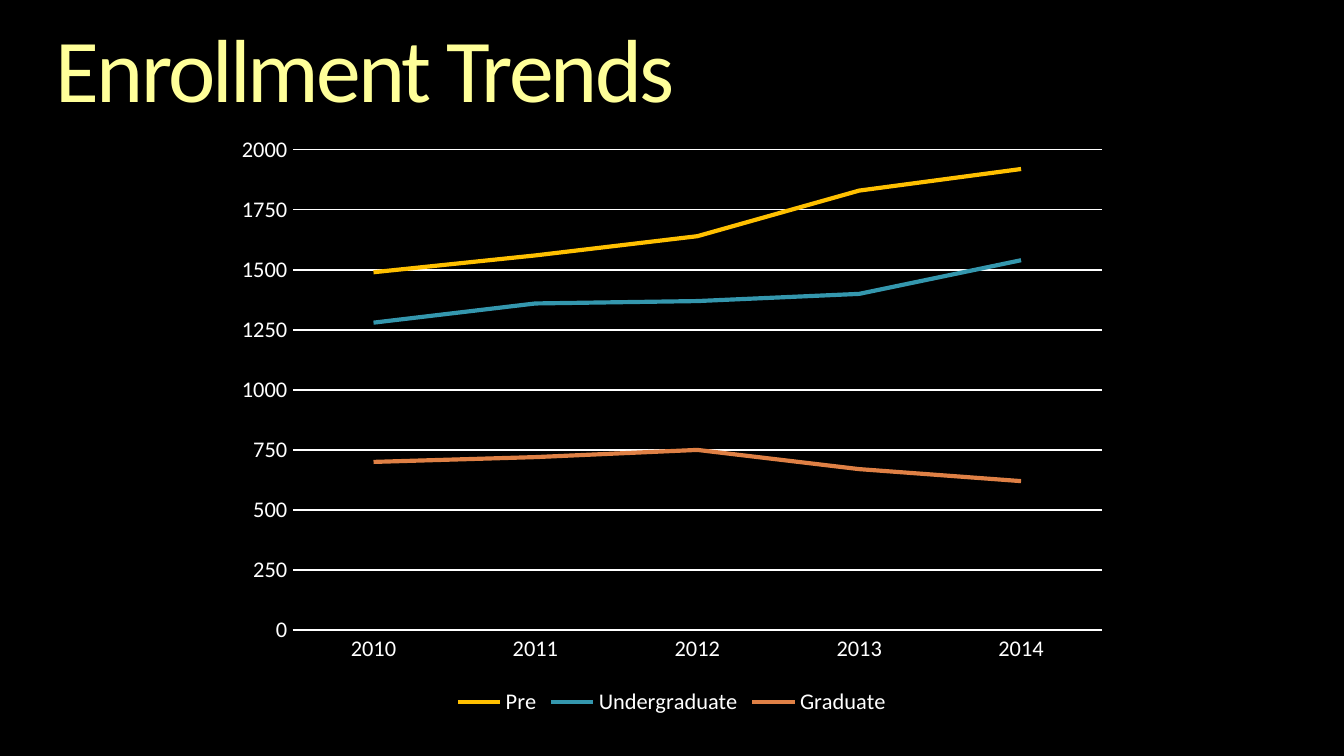
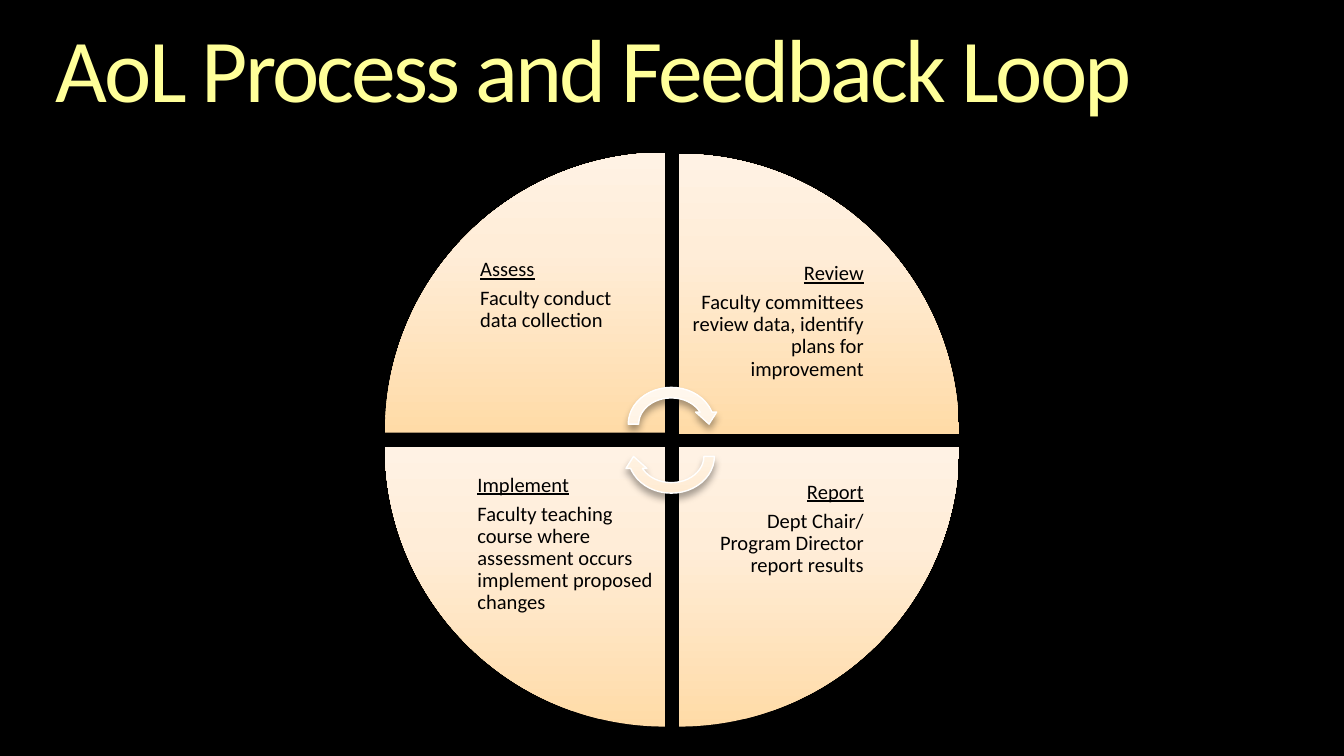
from lxml.etree import SubElement
from pptx import Presentation
from pptx.chart.data import CategoryChartData
from pptx.dml.color import RGBColor
from pptx.enum.chart import XL_CHART_TYPE as Chart, XL_LEGEND_POSITION as Legend, XL_TICK_MARK as Tick
from pptx.enum.shapes import MSO_SHAPE as Shape
from pptx.enum.text import MSO_ANCHOR as Anchor, MSO_AUTO_SIZE as AutoSize, PP_ALIGN as Align
from pptx.oxml.ns import qn
from pptx.util import Emu, Pt

FONT = "Calibri"
BLACK, WHITE = "000000", "FFFFFF"
TITLE_STOPS = [(0, "FFFFB9"), (36, "FFFF99"), (86, "F6AE1E")]
WEDGE_STOPS = [(0, "FFDBA7"), (65, "FFEDD8"), (100, "FFF2E4")]
ARROW_STOPS = [(0, "FFEAD0"), (65, "FFF5E8"), (100, "FFF8EF")]


def px(length):
    return Emu(length * 9525)


def rgb(value):
    return RGBColor.from_string(value)


def gradient(fill, owner, stops, angle):
    """Fill with colour stops; the angle runs clockwise and ignores rotation."""
    fill.gradient()
    fill.gradient_angle = 360 - angle
    owner.find(qn("a:gradFill")).set("rotWithShape", "0")
    stop_list = owner.find(".//" + qn("a:gsLst"))
    stop_list.clear()
    for position, colour in stops:
        stop = SubElement(stop_list, qn("a:gs"), pos=str(position * 1000))
        SubElement(stop, qn("a:srgbClr"), val=colour)


class Slides:
    def __init__(self):
        self.deck = Presentation()
        self.deck.slide_width, self.deck.slide_height = px(960), px(540)
        self.page = None

    def new_page(self, title):
        self.page = self.deck.slides.add_slide(self.deck.slide_layouts[5])
        self.page.background.fill.solid()
        self.page.background.fill.fore_color.rgb = rgb(BLACK)
        box = self.page.shapes.title
        box.left, box.top, box.width, box.height = px(40), px(18), px(880), px(71)
        frame = self.frame(box, Anchor.TOP, 0, 0)
        frame.auto_size = AutoSize.SHAPE_TO_FIT_TEXT
        para = frame.paragraphs[0]
        para.alignment, para.line_spacing = Align.LEFT, 0.9
        span = para.add_run()
        span.text = title
        self.style(span.font, 48)
        properties = span.font._element
        gradient(span.font.fill, properties, TITLE_STOPS, 90)
        properties.set("spc", "-150")

    def frame(self, box, anchor, side, top):
        frame = box.text_frame
        frame.word_wrap, frame.vertical_anchor = True, anchor
        frame.margin_left = frame.margin_right = px(side)
        frame.margin_top, frame.margin_bottom = px(top), 0
        return frame

    def style(self, font, size, colour=None):
        font.name, font.size = FONT, Pt(size)
        if colour:
            font.color.rgb = rgb(colour)

    def line_chart(self, left, top, width, height, categories, series, maximum, step):
        data = CategoryChartData()
        data.categories = categories
        for name, _, values in series:
            data.add_series(name, values)
        chart = self.page.shapes.add_chart(
            Chart.LINE, px(left), px(top), px(width), px(height), data).chart
        self.style(chart.font, 12, WHITE)
        chart.has_title = False
        chart.has_legend = True
        chart.legend.position, chart.legend.include_in_layout = Legend.BOTTOM, False
        self.style(chart.legend.font, 12, WHITE)
        # Axes and gridlines
        names, amounts = chart.category_axis, chart.value_axis
        for axis in (names, amounts):
            axis.major_tick_mark = axis.minor_tick_mark = Tick.NONE
            self.style(axis.tick_labels.font, 12, WHITE)
        amounts.minimum_scale, amounts.maximum_scale, amounts.major_unit = 0, maximum, step
        amounts.format.line.fill.background()
        for line in (names.format.line, amounts.major_gridlines.format.line):
            self.outline(line, WHITE, 0.75)
        # Series lines
        chart.plots[0].vary_by_categories = False
        for plotted, (_, colour, _) in zip(chart.plots[0].series, series):
            plotted.smooth = False
            self.outline(plotted.format.line, colour, 2.25)

    def outline(self, line, colour, width):
        line.color.rgb, line.width = rgb(colour), Pt(width)

    def shape(self, kind, left, top, width, height, stops, rotation=0, line=None):
        shape = self.page.shapes.add_shape(kind, px(left), px(top), px(width), px(height))
        shape.rotation = rotation
        properties = shape._element.spPr
        gradient(shape.fill, properties, stops, 270)
        if line:
            self.outline(shape.line, line, 0.75)
        else:
            shape.line.fill.background()
        # Soft shadow straight below
        shape.shadow.inherit = False
        shadow = SubElement(properties.find(qn("a:effectLst")), qn("a:outerShdw"), blurRad=str(Pt(4)),
                            dist=str(Pt(3)), dir="5400000", rotWithShape="0")
        colour = SubElement(shadow, qn("a:srgbClr"), val=BLACK)
        SubElement(colour, qn("a:alpha"), val="35000")

    def note(self, left, top, size, heading, body, align, side, inset):
        box = self.page.shapes.add_textbox(px(left), px(top), px(size), px(size))
        frame = self.frame(box, Anchor.TOP, side, inset)
        for index, text in enumerate((heading, body)):
            para = frame.add_paragraph() if index else frame.paragraphs[0]
            para.text = text
            para.alignment, para.line_spacing, para.space_after = align, 0.9, Pt(3.5)
            self.style(para.font, 11, BLACK)
            para.font.underline = index == 0


def enrollment(slides):
    slides.new_page("Enrollment Trends")
    slides.line_chart(160, 89, 640, 426, ["2010", "2011", "2012", "2013", "2014"], [
        ("Pre", "FFC000", (1490, 1560, 1640, 1830, 1920)),
        ("Undergraduate", "3497AE", (1280, 1360, 1370, 1400, 1540)),
        ("Graduate", "DF8045", (700, 720, 750, 670, 620)),
    ], 2000, 250)


def feedback_loop(slides):
    slides.new_page("AoL Process and Feedback Loop")
    wedge, note = 200, 141
    left, right, upper, lower = 275, 485, 109, 319
    # Quadrants clockwise from the upper left: place, text, side and top insets
    quadrants = [
        (left, upper, "Assess", "Faculty conduct data collection", 9, 17),
        (right, upper + 1, "Review",
         "Faculty committees review data, identify plans for improvement", 9, 19),
        (right, lower, "Report", "Dept Chair/ Program Director report results", 9, 25),
        (left, lower, "Implement",
         "Faculty teaching course where assessment occurs implement proposed changes", 7, 20),
    ]
    for turn, (x, y, heading, body, side, inset) in enumerate(quadrants):
        slides.shape(Shape.PIE_WEDGE, x, y, wedge, wedge, WEDGE_STOPS, turn * 90)
        # Each note sits in the wedge's inner corner
        note_x = x + wedge - note if x == left else x
        note_y = y if y == lower else y + wedge - note
        align = Align.LEFT if x == left else Align.RIGHT
        slides.note(note_x, note_y, note, heading, body, align, side, inset)
    # Arrows circling the centre
    for y, rotation in ((273, 0), (296, 180)):
        slides.shape(Shape.CIRCULAR_ARROW, 445, y, 69, 60, ARROW_STOPS, rotation, WHITE)


def main():
    slides = Slides()
    enrollment(slides)
    feedback_loop(slides)
    slides.deck.save("out.pptx")


if __name__ == "__main__":
    main()
